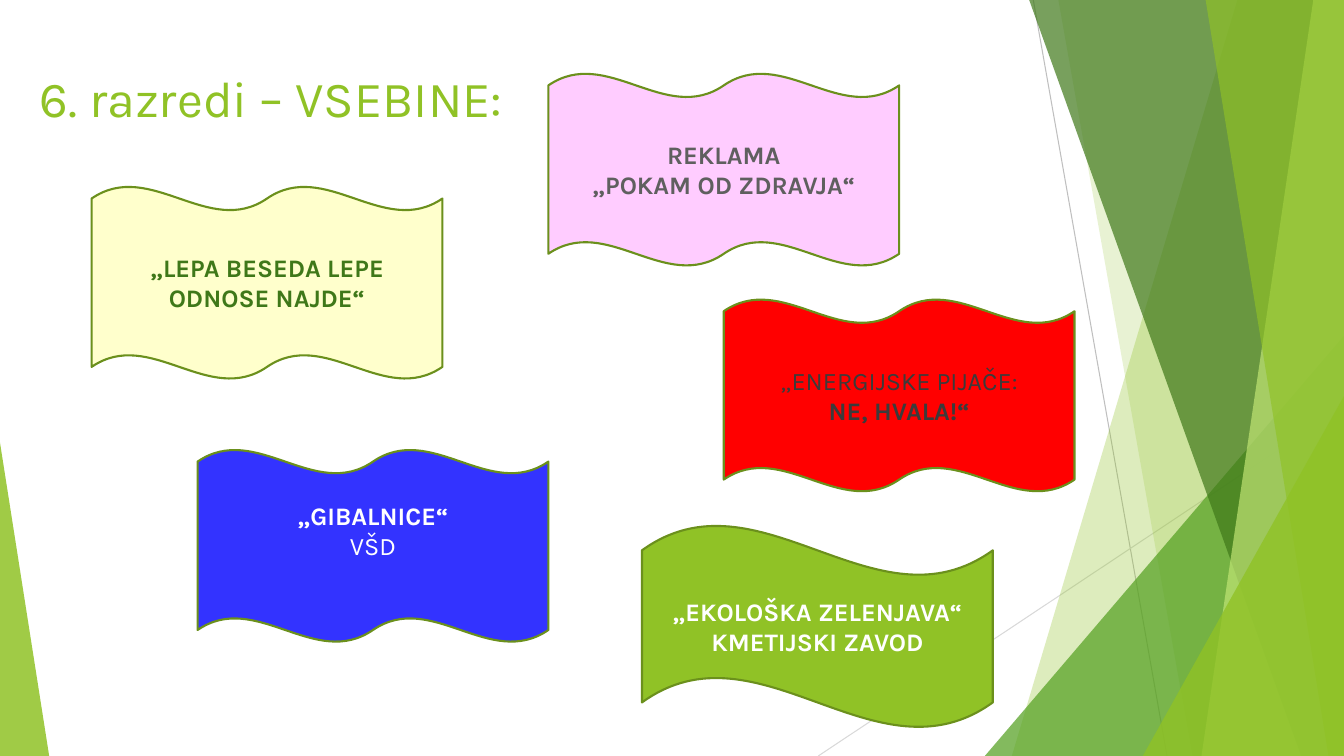
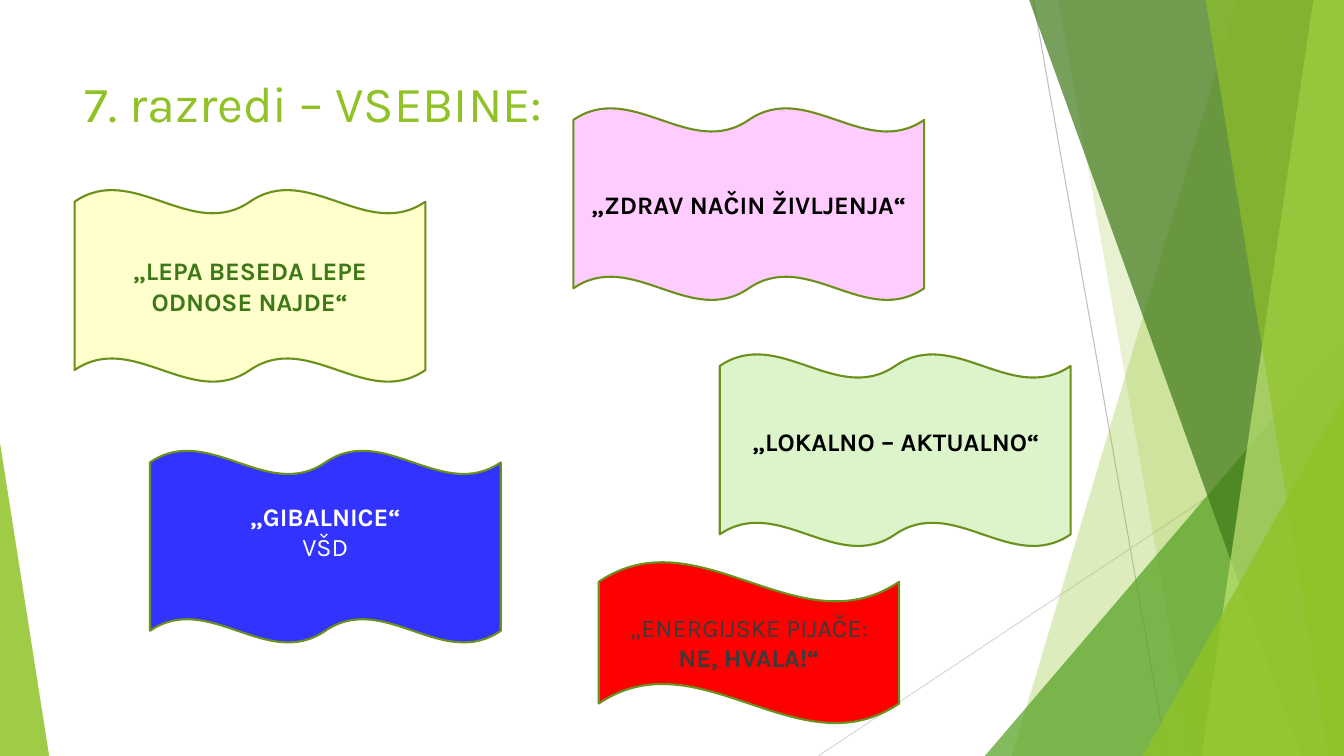
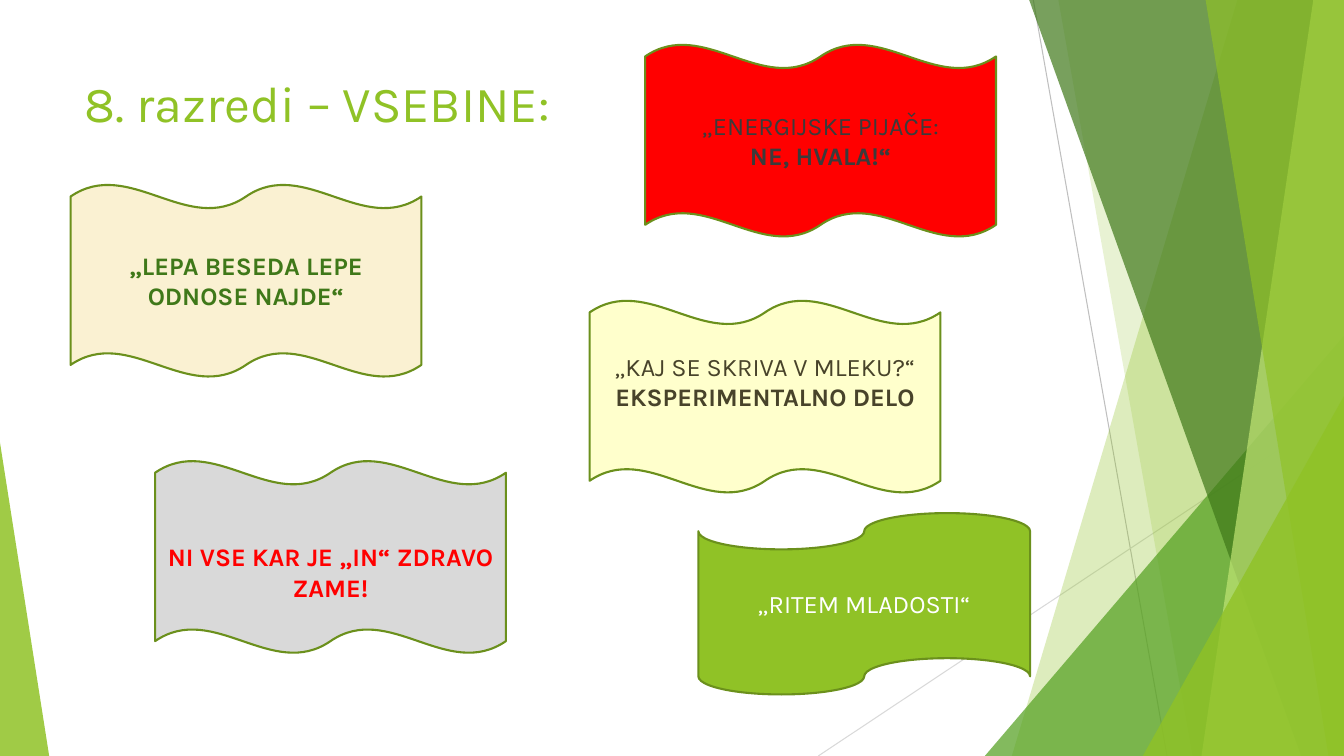
from dataclasses import dataclass

from lxml.etree import SubElement
from pptx import Presentation
from pptx.dml.color import RGBColor
from pptx.enum.shapes import MSO_CONNECTOR, MSO_SHAPE
from pptx.enum.text import MSO_ANCHOR, MSO_AUTO_SIZE, PP_ALIGN
from pptx.oxml.ns import qn
from pptx.util import Cm, Pt


@dataclass(frozen=True)
class Theme:
    font: str = "Karla"
    title_size: int = 36
    text_size: int = 18
    outline_width: float = 1.5
    ray_width: float = 0.75
    lime: str = "90C226"
    green: str = "54A021"
    forest: str = "3F7819"
    pale_lime: str = "C0E474"
    outline: str = "6B901C"
    red: str = "FF0000"
    pink: str = "FFCCFF"
    yellow: str = "FFFFCC"
    blue: str = "3333FF"
    mint: str = "DBF4CA"
    cream: str = "FAF1D2"
    silver: str = "D9D9D9"
    ray_grey: str = "BFBFBF"
    white: str = "FFFFFF"
    black: str = "000000"
    charcoal: str = "3B3B3B"
    grey: str = "5F5F5F"
    olive: str = "48432A"


T = Theme()

# Lengths in centimetres
SLIDE_W, SLIDE_H = 33.87, 19.05
TITLE_SIZE = (23.88, 3.66)
BANNER_SIZE = (8.84, 4.85)
TEXT_LINE = 0.76   # one line of banner text
INSET = 0.13

DOUBLE_WAVE = MSO_SHAPE.DOUBLE_WAVE
WAVE = MSO_SHAPE.WAVE
TAPE = MSO_SHAPE.FLOWCHART_PUNCHED_TAPE

# Topics: text colour, then lines of (text, bold)
KIND_WORDS = (T.forest, [("„LEPA BESEDA LEPE ODNOSE NAJDE“", True)])
ENERGY_DRINKS = (T.charcoal, [("„ENERGIJSKE PIJAČE:", False), ("NE, HVALA!“", True)])
MOVEMENT = (T.white, [("„GIBALNICE“", True), ("VŠD", False)])
ADVERT = (T.grey, [("REKLAMA", True), ("„POKAM OD ZDRAVJA“", True)])
VEGETABLES = (T.white, [("„EKOLOŠKA ZELENJAVA“", True), ("KMETIJSKI ZAVOD", True)])
LIFESTYLE = (T.black, [("„ZDRAV NAČIN ŽIVLJENJA“", True)])
LOCAL = (T.black, [("„LOKALNO – AKTUALNO“", True)])
NOT_ALL_IN = (T.red, [("NI VSE KAR JE „IN“ ZDRAVO ZAME!", True)])
MILK = (T.olive, [("„KAJ SE SKRIVA V MLEKU?“", False), ("EKSPERIMENTALNO DELO", True)])
RHYTHM = (T.white, [("„RITEM MLADOSTI“", False)])


def banner(topic, fill, left, top, form=DOUBLE_WAVE, size=BANNER_SIZE, shift=0):
    """Shift moves the text by half lines: negative is up, positive is down."""
    return dict(topic=topic, fill=fill, box=(left, top, *size), form=form, shift=shift)


GRADES = [
    dict(title="6. razredi – VSEBINE:", title_at=(0.74, 1.57), banners=[
        banner(ENERGY_DRINKS, T.red, 18.24, 7.54),
        banner(ADVERT, T.pink, 13.82, 1.85),
        banner(KIND_WORDS, T.yellow, 2.31, 4.7),
        banner(MOVEMENT, T.blue, 4.98, 11.33, shift=-1),
        banner(VEGETABLES, T.lime, 16.18, 13.23, WAVE, (8.84, 5.11)),
    ]),
    dict(title="7. razredi – VSEBINE:", title_at=(1.88, 1.7), banners=[
        banner(None, T.mint, 18.14, 8.92),
        banner(LIFESTYLE, T.pink, 14.45, 2.72),
        banner(KIND_WORDS, T.yellow, 1.88, 4.78),
        banner(MOVEMENT, T.blue, 3.78, 11.35, shift=-1),
        banner(ENERGY_DRINKS, T.red, 15.09, 14.15, WAVE, (7.57, 4.09)),
    ], label=(LOCAL, (18.62, 10.62, 7.92, 1.02))),
    dict(title="8. razredi – VSEBINE:", title_at=(1.88, 1.7), banners=[
        banner(KIND_WORDS, T.cream, 1.78, 4.65),
        banner(NOT_ALL_IN, T.silver, 3.91, 11.61, shift=1),
        banner(ENERGY_DRINKS, T.red, 16.26, 1.12),
        banner(MILK, T.yellow, 14.86, 7.57, shift=-1),
        banner(RHYTHM, T.lime, 17.6, 12.93, TAPE, (8.36, 4.57)),
    ]),
]

# Backdrop, from back to front
RAYS = [((26.04, 0), (29.41, SLIDE_H), T.ray_grey),
        ((SLIDE_W, 10.24), (20.62, SLIDE_H), T.silver)]
# Facets reach the right edge: x at the top, x at the bottom, colour, opacity
# Corners are triangles: left, top, right, apex, colour, opacity
FACETS = [
    ("facet", 31.19, 25.5, T.lime, 30),
    ("facet", 26.67, 30.05, T.lime, 20),
    ("corner", 24.82, 8.46, SLIDE_W, 1, T.green, 72),
    ("facet", 25.93, 32.79, T.forest, 70),
    ("facet", 33.1, 30.28, T.pale_lime, 70),
    ("facet", 30.38, 33.48, T.lime, 65),
    ("corner", 28.8, 9.98, SLIDE_W, 1, T.lime, 80),
    ("corner", 0, 11.15, 1.24, 0, T.lime, 85),
]


def rgb(code):
    return RGBColor.from_string(code)


def cm(values):
    return [Cm(value) for value in values]


def paint(shape, color, opacity=100):
    shape.shadow.inherit = False
    shape.fill.solid()
    shape.fill.fore_color.rgb = rgb(color)
    if opacity < 100:
        tint = shape.element.spPr.find(qn("a:solidFill"))[0]
        SubElement(tint, qn("a:alpha"), val=str(opacity * 1000))


def draw_facet(shapes, x_top, x_bottom):
    corners = [(x_top, -0.02), (SLIDE_W, -0.02), (SLIDE_W, SLIDE_H), (x_bottom, SLIDE_H)]
    start, *others = [cm(corner) for corner in corners]
    outline = shapes.build_freeform(*start)
    outline.add_line_segments(others, close=True)
    return outline.convert_to_shape()


def draw_corner(shapes, left, top, right, apex):
    box = cm((left, top, right - left, SLIDE_H - top))
    corner = shapes.add_shape(MSO_SHAPE.ISOSCELES_TRIANGLE, *box)
    corner.adjustments[0] = apex
    return corner


def add_backdrop(slide, layout):
    """Draw the backdrop once and hand it to the shared layout."""
    backdrop = slide.shapes.add_group_shape()
    for start, end, color in RAYS:
        ray = backdrop.shapes.add_connector(MSO_CONNECTOR.STRAIGHT, *cm(start + end))
        ray.line.color.rgb = rgb(color)
        ray.line.width = Pt(T.ray_width)
        SubElement(ray.element.spPr, qn("a:effectLst"))
    draw = {"facet": draw_facet, "corner": draw_corner}
    for kind, *geometry, color, opacity in FACETS:
        part = draw[kind](backdrop.shapes, *geometry)
        paint(part, color, opacity)
        part.line.fill.background()
    layout.shapes.element.insert(2, backdrop.element)


def add_run(paragraph, text, size, color, bold=False):
    run = paragraph.add_run()
    run.text = text
    run.font.name = T.font
    run.font.size = Pt(size)
    run.font.bold = bold
    run.font.color.rgb = rgb(color)


def write_topic(frame, topic):
    color, lines = topic
    for index, (text, bold) in enumerate(lines):
        paragraph = frame.add_paragraph() if index else frame.paragraphs[0]
        paragraph.alignment = PP_ALIGN.CENTER
        add_run(paragraph, text, T.text_size, color, bold)


def add_title(slide, text, place):
    title = slide.shapes.title
    title.left, title.top, title.width, title.height = cm(place + TITLE_SIZE)
    frame = title.text_frame
    frame.auto_size = MSO_AUTO_SIZE.NONE
    frame.word_wrap = True
    frame.vertical_anchor = MSO_ANCHOR.TOP
    frame.paragraphs[0].alignment = PP_ALIGN.LEFT
    add_run(frame.paragraphs[0], text, T.title_size, T.lime)


def add_banner(slide, topic, fill, box, form, shift):
    flag = slide.shapes.add_shape(form, *cm(box))
    paint(flag, fill)
    flag.line.color.rgb = rgb(T.outline)
    flag.line.width = Pt(T.outline_width)
    frame = flag.text_frame
    frame.word_wrap = True
    frame.vertical_anchor = MSO_ANCHOR.MIDDLE
    frame.margin_top = Cm(INSET + TEXT_LINE * max(shift, 0))
    frame.margin_bottom = Cm(INSET + TEXT_LINE * max(-shift, 0))
    if topic:
        write_topic(frame, topic)


def add_label(slide, topic, box):
    label = slide.shapes.add_textbox(*cm(box))
    label.text_frame.word_wrap = False
    label.text_frame.auto_size = MSO_AUTO_SIZE.SHAPE_TO_FIT_TEXT
    write_topic(label.text_frame, topic)


def main():
    deck = Presentation()
    deck.slide_width, deck.slide_height = cm((SLIDE_W, SLIDE_H))
    layout = deck.slide_layouts.get_by_name("Title Only")
    for index, grade in enumerate(GRADES):
        slide = deck.slides.add_slide(layout)
        if index == 0:
            add_backdrop(slide, layout)
        add_title(slide, grade["title"], grade["title_at"])
        for entry in grade["banners"]:
            add_banner(slide, **entry)
        if "label" in grade:
            add_label(slide, *grade["label"])
    deck.save("out.pptx")


if __name__ == "__main__":
    main()
